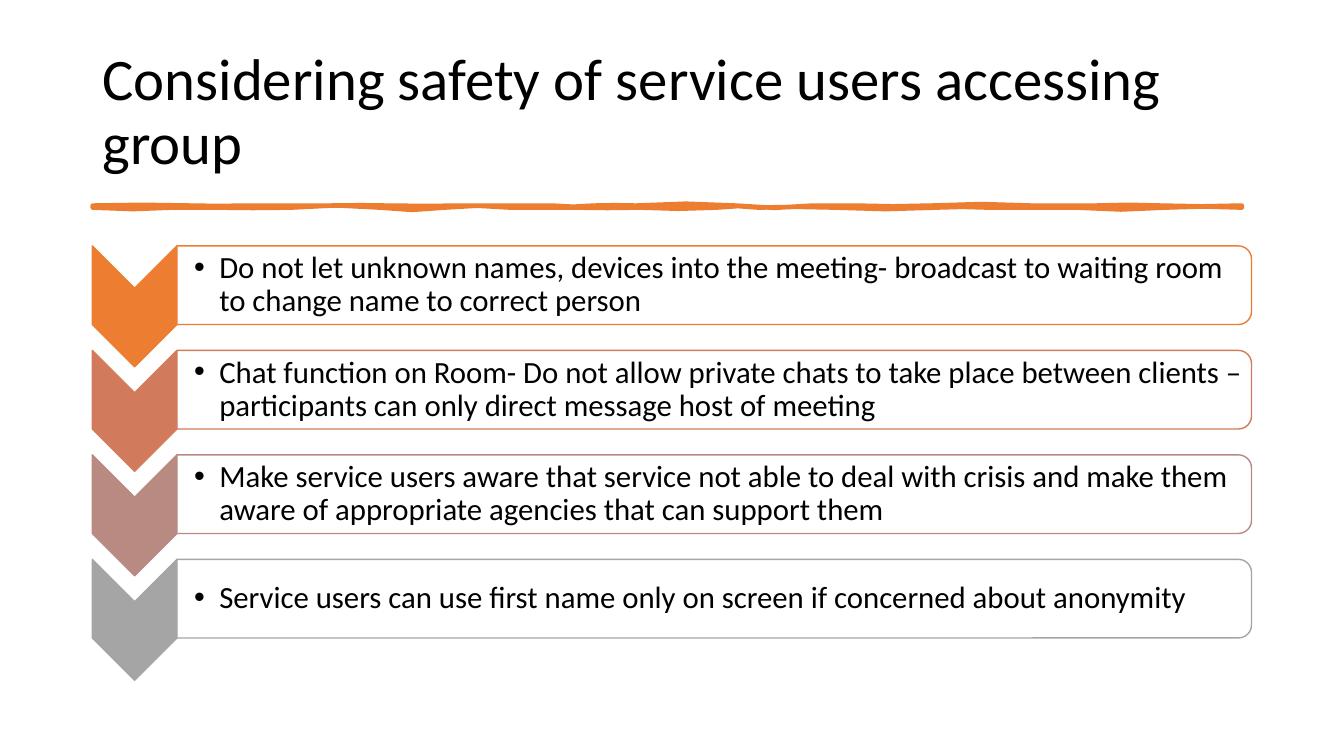
from lxml import etree
from pptx import Presentation
from pptx.dml.color import RGBColor
from pptx.enum.shapes import MSO_SHAPE
from pptx.enum.text import MSO_ANCHOR, MSO_AUTO_SIZE, PP_ALIGN
from pptx.oxml.ns import qn
from pptx.util import Inches, Pt

CHEVRON = MSO_SHAPE.CHEVRON
ROUNDED_END = MSO_SHAPE.ROUND_2_SAME_RECTANGLE
MIDDLE = MSO_ANCHOR.MIDDLE
NO_AUTOFIT = MSO_AUTO_SIZE.NONE
LEFT = PP_ALIGN.LEFT

TITLE = "Considering safety of service users accessing group"
MEASURES = [
    ("ED7D31", "Do not let unknown names, devices into the meeting- broadcast to "
               "waiting room to change name to correct person"),
    ("D17B5C", "Chat function on Room- Do not allow private chats to take place "
               "between clients – participants can only direct message host of meeting"),
    ("B98A82", "Make service users aware that service not able to deal with crisis "
               "and make them aware of appropriate agencies that can support them"),
    ("A5A5A5", "Service users can use first name only on screen if concerned about "
               "anonymity"),
]

UPPER_WAVES = [
    (0, -2, 1.9), (2, -1, 2.44), (1, -1, 3.31), (1, -2, 3.84), (2, -1, 4.6),
    (1, -1, 5.48), (1, 2, 5.89), (-2, 1, 6.31), (-1, -4, 7.3), (4, 2, 8.06),
    (-2, 2, 8.48), (-2, 4, 9.24), (-4, 0, 10.23), (0, 0, 10.87), (0, -2, 11.52),
    (2, 0, 12.32),
]
LOWER_WAVES = [
    (0, -3, 11.56), (3, 2, 10.68), (-2, 2, 9.81), (-2, 0, 9.28), (0, 4, 8.29),
    (-4, 2, 7.53), (-2, -2, 7.11), (2, 1, 6.35), (-1, 2, 5.7), (-2, 2, 5.06),
    (-2, -3, 4.41), (3, 3, 3.77), (-3, -3, 2.89), (3, -2, 2.13), (2, -2, 1.71),
    (2, 2, 0.92),
]


def paint(fill, color, alpha=None):
    fill.solid()
    fill.fore_color.rgb = RGBColor.from_string(color)
    if alpha is not None:
        tint = fill.fore_color._xFill.find(qn("a:srgbClr"))
        etree.SubElement(tint, qn("a:alpha"), val=str(alpha * 1000))


def write(frame, words, size, font="Calibri", color="000000", insets=None,
          bullet=None, indent=0.25, level=0):
    frame.word_wrap = True
    frame.auto_size = NO_AUTOFIT
    frame.vertical_anchor = MIDDLE
    if insets:
        (frame.margin_left, frame.margin_top,
         frame.margin_right, frame.margin_bottom) = map(Inches, insets)
    paragraph = frame.paragraphs[0]
    paragraph.level = level
    paragraph.alignment = LEFT
    paragraph.line_spacing = 0.9
    if bullet:
        properties = paragraph._p.get_or_add_pPr()
        properties.set("marL", str(Inches(indent)))
        properties.set("indent", str(-Inches(indent)))
        etree.SubElement(properties, qn("a:buFont"), typeface="Arial")
        etree.SubElement(properties, qn("a:buChar"), char=bullet)
    run = paragraph.add_run()
    run.text = words
    run.font.name = font
    run.font.size = Pt(size)
    paint(run.font.fill, color)


def wave_points(start, level, waves, steps=2):
    points = []
    for first, second, end in waves:
        for step in range(1, steps + 1):
            t = step / steps
            lift = 3 * t * (1 - t) * ((1 - t) * first + t * second) / 100
            points.append((Inches(start + (end - start) * t), Inches(level + lift)))
        start = end
    return points


class SafetySlide:
    accent = "ED7D31"
    columns = rows = 100

    def __init__(self, deck):
        self.column = deck.slide_width / self.columns
        self.row = deck.slide_height / self.rows
        self.slide = deck.slides.add_slide(deck.slide_layouts[5])
        self.shapes = self.slide.shapes

    def place(self, left, top, width, height):
        return (round(left * self.column), round(top * self.row),
                round(width * self.column), round(height * self.row))

    def title(self, words, *cell):
        heading = self.shapes.title
        heading.left, heading.top, heading.width, heading.height = self.place(*cell)
        write(heading.text_frame, words, 42)

    def outline(self, shape, color, width):
        shape.shadow.inherit = False
        paint(shape.line.fill, color)
        shape.line.width = Pt(width)

    def brush_rule(self, left, right, upper, lower):
        builder = self.shapes.build_freeform(Inches(left), Inches(upper))
        builder.add_line_segments(
            wave_points(left, upper, UPPER_WAVES)
            + [(Inches(right), Inches(lower))]
            + wave_points(right, lower, LOWER_WAVES))
        rule = builder.convert_to_shape()
        paint(rule.fill, self.accent)
        self.outline(rule, self.accent, 3.25)

    def quarter_turned(self, kind, cell, fill, line, alpha=None):
        left, top, width, height = self.place(*cell)
        shift = (width - height) // 2
        shape = self.shapes.add_shape(kind, left + shift, top - shift, height, width)
        shape.rotation = 90
        paint(shape.fill, fill, alpha)
        self.outline(shape, line, 1)

    def bullet_text(self, words, *cell):
        box = self.shapes.add_textbox(*self.place(*cell))
        write(box.text_frame, words, 22, insets=(0.17, 0.02, 0.02, 0.02),
              bullet="•", level=1)

    def measure(self, index, color, words):
        top = 32.53 + index * 13.82
        self.quarter_turned(CHEVRON, (6.87, top, 6.3, 16), color, color)
        self.quarter_turned(ROUNDED_END, (13.17, top, 79.95, 10.4), "FFFFFF", color, 90)
        self.bullet_text(words, 13.17, top + 0.54, 79.65, 9.33)


def main():
    deck = Presentation()
    deck.slide_width, deck.slide_height = Inches(40 / 3), Inches(7.5)
    safety = SafetySlide(deck)
    safety.title(TITLE, 6.87, 5.33, 86.25, 19.33)
    safety.brush_rule(0.92, 12.32, 2.04, 2.06)
    for index, (color, words) in enumerate(MEASURES):
        safety.measure(index, color, words)
    deck.save("out.pptx")


if __name__ == "__main__":
    main()
